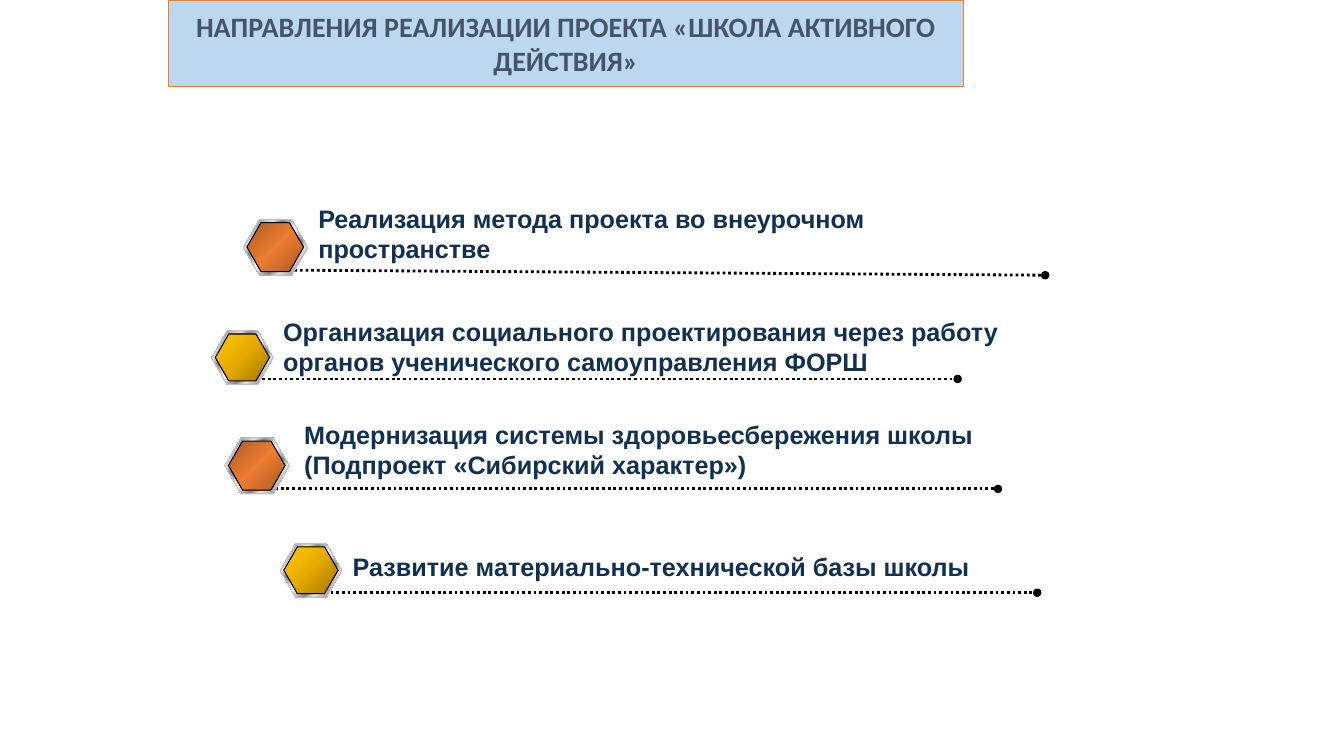
from pptx import Presentation
from pptx.dml.color import RGBColor
from pptx.enum.dml import MSO_LINE
from pptx.enum.shapes import MSO_CONNECTOR, MSO_SHAPE
from pptx.enum.text import MSO_ANCHOR, MSO_AUTO_SIZE, PP_ALIGN
from pptx.oxml import parse_xml
from pptx.oxml.ns import nsdecls, qn
from pptx.util import Pt

TITLE = "НАПРАВЛЕНИЯ РЕАЛИЗАЦИИ ПРОЕКТА «ШКОЛА АКТИВНОГО ДЕЙСТВИЯ»"
# text, its box, badge (left, top, width, core style), line (x1, y1, x2, y2)
ITEMS = [
    ("Реализация метода проекта во внеурочном пространстве",
     (220.3, 141.8, 520.6, 51), (173.8, 156.8, 46, "orange"),
     (210.2, 193, 746.6, 196.6)),
    ("Организация социального проектирования через работу "
     "органов ученического самоуправления ФОРШ",
     (195.1, 222.5, 551.5, 51), (151.2, 236.4, 44, "gold"),
     (187.2, 270.7, 684, 270.7)),
    ("Модернизация системы здоровьесбережения школы "
     "(Подпроект «Сибирский характер»)",
     (210.2, 295.9, 524.9, 51), (160.6, 312.8, 46, "orange"),
     (196.6, 349.2, 712.8, 349.2)),
    ("Развитие материально-технической базы школы",
     (244.8, 390.2, 474.5, 29), (200.2, 388.4, 44, "gold"),
     (236.2, 423.4, 740.9, 423.4)),
]
COLORS = {
    "panel": "BDD7EE", "edge": "ED7D31", "title": "44546A", "text": "113052",
    "black": "000000", "gray": "808080", "rim": "C0C0C0",
    "light": "E6E6E6", "steel": "7D8496", "white": "FFFFFF",
    "rust": "AA5923", "orange": "ED7D31",
    "bronze": "A07400", "amber": "E6A900", "gold": "FFCA00",
}
# angle, then (position in percent, color)
BLENDS = {
    "metal": (45, [(0, "light"), (8, "steel"), (26, "light"), (34, "steel"),
                   (46, "light"), (50, "white"), (54, "light"), (66, "steel"),
                   (74, "light"), (92, "steel"), (100, "light")]),
    "orange": (45, [(0, "rust"), (50, "orange"), (100, "rust")]),
    "gold": (225, [(0, "bronze"), (50, "amber"), (100, "gold")]),
}


def rgb(name):
    return RGBColor.from_string(COLORS[name])


def pts(*nums):
    return [Pt(n) for n in nums]


def write(shape, text, size=18, font="Arial", color="text", align=PP_ALIGN.LEFT,
          anchor=MSO_ANCHOR.TOP, fit=MSO_AUTO_SIZE.SHAPE_TO_FIT_TEXT):
    frame = shape.text_frame
    frame.word_wrap = True
    frame.auto_size = fit
    frame.vertical_anchor = anchor
    para = frame.paragraphs[0]
    para.alignment = align
    run = para.add_run()
    run.text = text
    run.font.size, run.font.name, run.font.bold = Pt(size), font, True
    run.font.color.rgb = rgb(color)


def outline(shape, color, width):
    shape.line.color.rgb = rgb(color)
    shape.line.width = Pt(width)


def blend(shape, name):
    """Give a shape without fill a gradient of many stops."""
    angle, stops = BLENDS[name]
    marks = "".join(f'<a:gs pos="{pos * 1000}"><a:srgbClr val="{COLORS[c]}"/></a:gs>'
                    for pos, c in stops)
    shape.element.spPr.append(parse_xml(
        f'<a:gradFill {nsdecls("a")} rotWithShape="1"><a:gsLst>{marks}</a:gsLst>'
        f'<a:lin ang="{angle * 60000}" scaled="1"/></a:gradFill>'))


def hexagon(shapes, left, top, width, height):
    shape = shapes.add_shape(MSO_SHAPE.HEXAGON, *pts(left, top, width, height))
    shape.adjustments[0], shape.adjustments[1] = 0.289, 1.155
    shape.shadow.inherit = False
    # keep the effect list last so that fills can be appended in order
    shape.element.spPr.remove(shape.element.spPr.find(qn("a:effectLst")))
    return shape


def calm(shape):
    shape.shadow.inherit = False


def badge(shapes, left, top, width, core):
    high = width * 0.865
    base = hexagon(shapes, left, top + 0.4, width, high)
    base.fill.solid()
    base.fill.fore_color.rgb = rgb("gray")
    base.line.fill.background()
    rim = hexagon(shapes, left, top, width, high)
    blend(rim, "metal")
    outline(rim, "rim", 0.75)
    face = hexagon(shapes, left + 2.6, top + 2.2, width * 0.88, high * 0.88)
    blend(face, core)
    outline(face, "black", 0.75)
    for part in (base, rim, face):
        calm(part)


def leader(shapes, *ends):
    """Draw a dotted line that ends in a round dot."""
    line = shapes.add_connector(MSO_CONNECTOR.STRAIGHT, *pts(*ends))
    outline(line, "black", 2)
    line.line.dash_style = MSO_LINE.ROUND_DOT
    props = line.element.spPr
    props.find(qn("a:ln")).append(parse_xml(f'<a:tailEnd {nsdecls("a")} type="oval"/>'))
    props.append(parse_xml(f'<a:effectLst {nsdecls("a")}/>'))


def header(shape):
    shape.left, shape.top, shape.width, shape.height = pts(120.2, 0, 568, 62)
    shape.element.spPr.append(parse_xml(
        f'<a:prstGeom {nsdecls("a")} prst="roundRect"><a:avLst>'
        '<a:gd name="adj" fmla="val 35100"/></a:avLst></a:prstGeom>'))
    shape.fill.solid()
    shape.fill.fore_color.rgb = rgb("panel")
    outline(shape, "edge", 1)
    write(shape, TITLE, size=20, font="Calibri", color="title",
          align=PP_ALIGN.CENTER, anchor=MSO_ANCHOR.MIDDLE, fit=MSO_AUTO_SIZE.NONE)


def main():
    deck = Presentation()
    deck.slide_width, deck.slide_height = pts(960, 540)
    shapes = deck.slides.add_slide(deck.slide_layouts[5]).shapes
    header(shapes.title)
    for text, box, mark, ends in ITEMS:
        leader(shapes, *ends)
        badge(shapes, *mark)
        write(shapes.add_textbox(*pts(*box)), text)
    deck.save("out.pptx")


if __name__ == "__main__":
    main()
